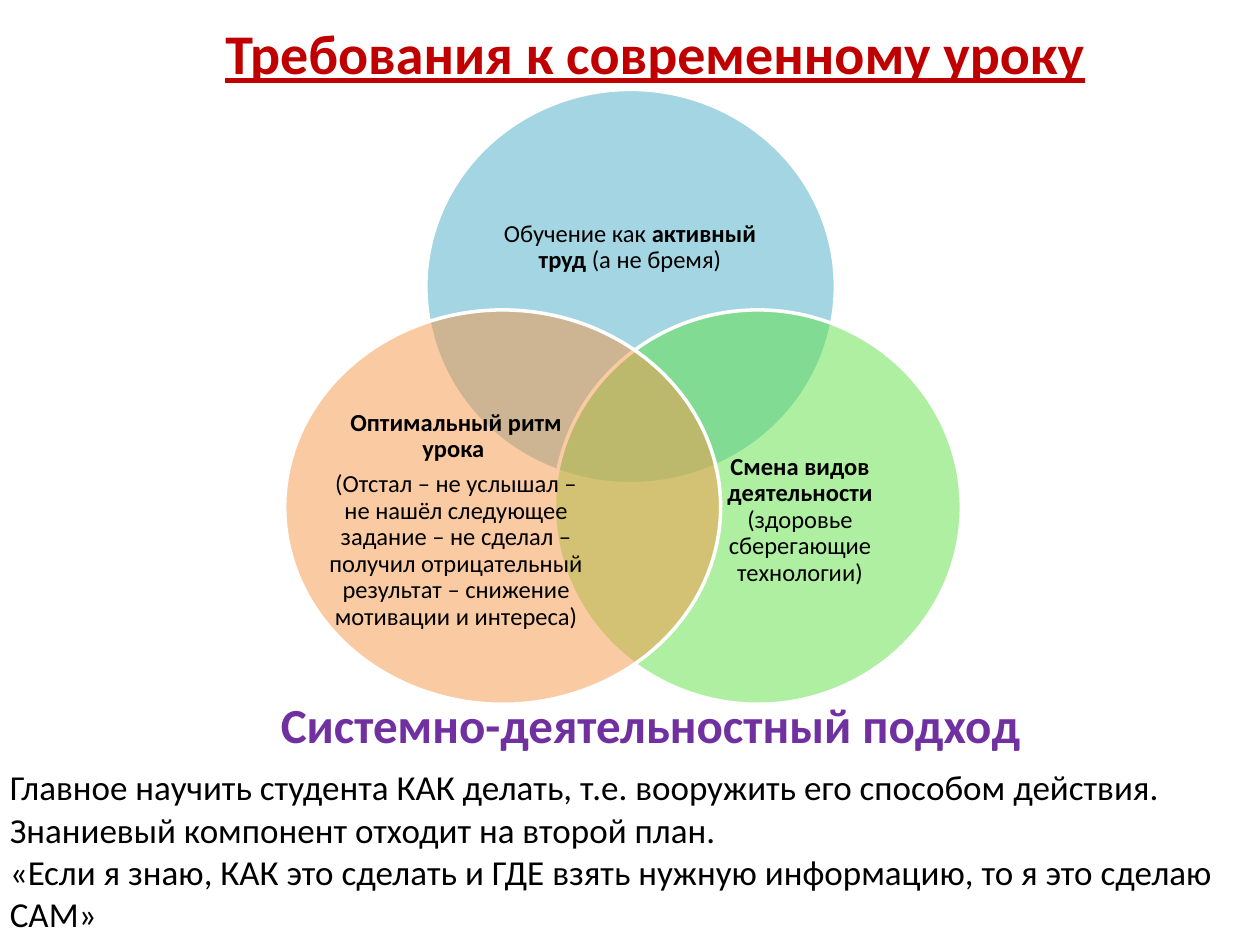
import pptx
import pptx.util
import pptx.dml.color
import pptx.enum.shapes
import pptx.enum.text
import lxml.etree
from pptx.util import Inches

FONT = "Calibri"
CIRCLES = [
    dict(at=(3.38, 0.71, 3.25, 3.13), fill="4BACC6", label=(3.81, 1.26, 2.38, 1.41),
         text=[[("Обучение как ", False), ("активный труд ", True), ("(а не бремя)", False)]]),
    dict(at=(4.4, 2.46, 3.23, 3.13), fill="60E146", label=(5.38, 3.27, 1.94, 1.72),
         text=[[("Смена видов деятельности ", True),
                ("(здоровье сберегающие технологии)", False)]]),
    dict(at=(2.26, 2.46, 3.46, 3.13), fill="F79646", label=(2.58, 3.27, 2.08, 1.72),
         text=[[("Оптимальный ритм урока ", True)],
               [("(Отстал – не услышал – не нашёл следующее задание – не сделал – "
                 "получил отрицательный результат – снижение мотивации и интереса)", False)]]),
]
TITLE = [[("Требования к современному уроку", True)]]
APPROACH = [[("Системно-деятельностный подход", True)]]
SUMMARY = [
    [("Главное научить студента КАК делать, т.е. вооружить его способом действия.", False)],
    [("Знаниевый компонент отходит на второй план.", False)],
    [("«Если я знаю, КАК это сделать и ГДЕ взять нужную информацию, то я это сделаю САМ»", False)],
]


def rgb(color):
    return pptx.dml.color.RGBColor.from_string(color)


def add_text(s, at, paragraphs, size, color="000000", underline=None, wrap=True, label=False):
    tf = s.shapes.add_textbox(*map(Inches, at)).text_frame
    tf.word_wrap = wrap
    if label:
        tf.vertical_anchor = pptx.enum.text.MSO_ANCHOR.MIDDLE
        tf.margin_left = tf.margin_right = tf.margin_top = tf.margin_bottom = 0
    else:
        tf.auto_size = pptx.enum.text.MSO_AUTO_SIZE.SHAPE_TO_FIT_TEXT
    for i, runs in enumerate(paragraphs):
        p = tf.add_paragraph() if i else tf.paragraphs[0]
        if label:
            p.alignment = pptx.enum.text.PP_ALIGN.CENTER
            p.line_spacing = 0.9
            p.space_after = pptx.util.Pt(size * 0.35)
        for text, bold in runs:
            r = p.add_run()
            r.text = text
            r.font.name = FONT
            r.font.size = pptx.util.Pt(size)
            r.font.bold = bold
            r.font.underline = underline
            r.font.color.rgb = rgb(color)


def add_circle(s, at, color):
    sp = s.shapes.add_shape(pptx.enum.shapes.MSO_SHAPE.OVAL, *map(Inches, at))
    sp.shadow.inherit = False
    sp.fill.solid()
    sp.fill.fore_color.rgb = rgb(color)
    clr = sp.fill._xPr.find(".//" + pptx.oxml.ns.qn("a:srgbClr"))
    lxml.etree.SubElement(clr, pptx.oxml.ns.qn("a:alpha"), val="50000")
    sp.line.color.rgb = rgb("FFFFFF")
    sp.line.width = pptx.util.Pt(2)


prs = pptx.Presentation()
prs.slide_width, prs.slide_height = Inches(10), Inches(7.5)
s = prs.slides.add_slide(prs.slide_layouts[6])

add_text(s, (1.69, 0.1, 7.09, 0.64), TITLE, 32, color="C00000", underline=True, wrap=False)
for circle in CIRCLES:
    add_circle(s, circle["at"], circle["fill"])
    add_text(s, circle["label"], circle["text"], 14, label=True)
add_text(s, (2.13, 5.46, 6.11, 0.57), APPROACH, 28, color="7030A0", wrap=False)
add_text(s, (-0.02, 6.03, 10, 1.45), SUMMARY, 20)

prs.save("out.pptx")
